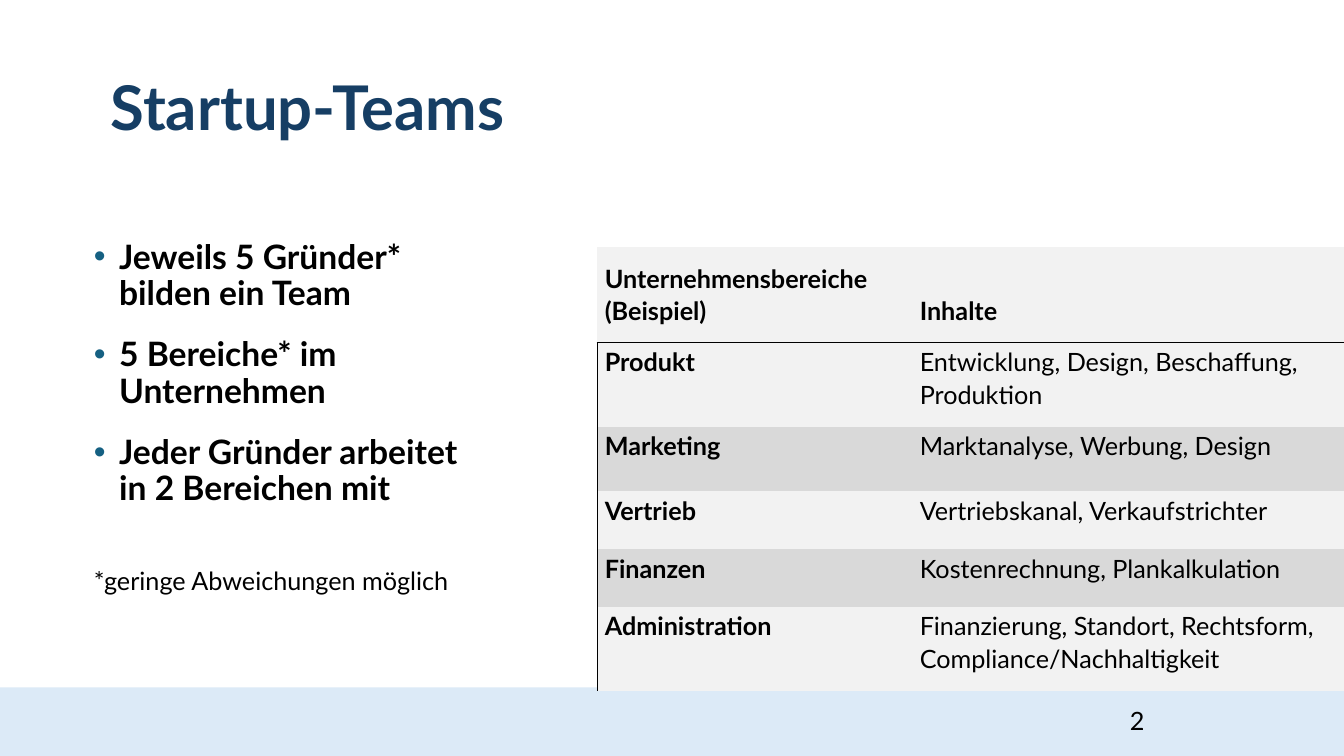
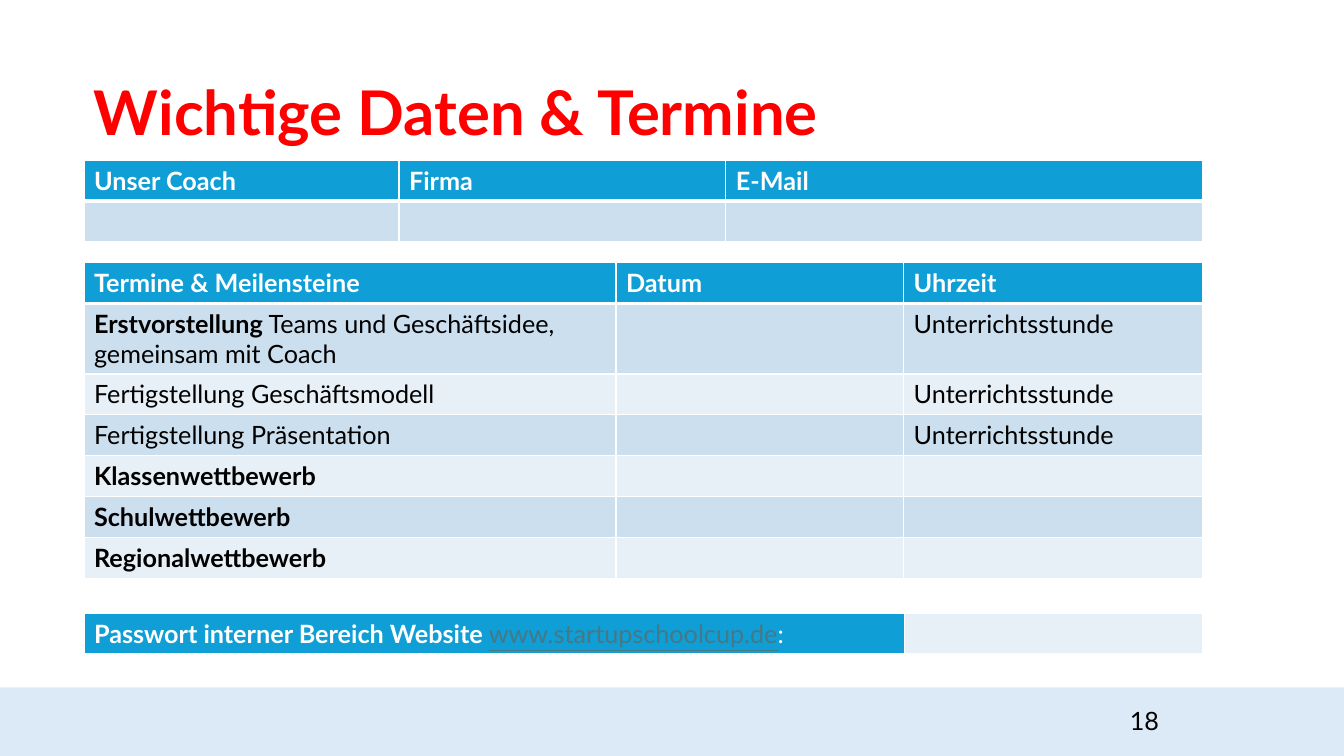
from lxml.etree import SubElement
from pptx import Presentation
from pptx.dml.color import RGBColor
from pptx.enum.shapes import MSO_SHAPE
from pptx.enum.text import MSO_ANCHOR
from pptx.oxml.ns import qn
from pptx.util import Pt

FONT = "Lato"
BLACK = RGBColor(0x00, 0x00, 0x00)
WHITE = RGBColor(0xFF, 0xFF, 0xFF)
NAVY = RGBColor(0x16, 0x3E, 0x64)
RED = RGBColor(0xFF, 0x00, 0x00)
TEAL = RGBColor(0x15, 0x60, 0x82)
BAND_BLUE = RGBColor(0xDC, 0xEA, 0xF7)
LIGHT_GREY = RGBColor(0xF2, 0xF2, 0xF2)
MID_GREY = RGBColor(0xD9, 0xD9, 0xD9)
HEADER_BLUE = RGBColor(0x0F, 0x9E, 0xD5)
ROW_BLUE = RGBColor(0xCC, 0xDF, 0xEF)
PALE_BLUE = RGBColor(0xE7, 0xF0, 0xF7)
LINK_BLUE = RGBColor(0x46, 0x78, 0x86)


def format_text(para, size, color, bold):
    for span in para.runs:
        span.font.name = FONT
        span.font.size = Pt(size)
        span.font.color.rgb = color
        span.font.bold = bold


def fill_cell(cell, pieces, fill, color, edges):
    """Write a bold piece followed by regular ones; edges maps a side to (color, width)."""
    para = cell.text_frame.paragraphs[0]
    for text in pieces:
        if text:
            para.add_run().text = text
    format_text(para, 18, color, False)
    if pieces and pieces[0]:
        para.runs[0].font.bold = True
    properties = cell._tc.get_or_add_tcPr()
    for side in "LRTB":
        line = SubElement(properties, qn(f"a:ln{side}"))
        if side in edges:
            line_color, width = edges[side]
            line.set("w", str(Pt(width)))
            solid = SubElement(line, qn("a:solidFill"))
            SubElement(solid, qn("a:srgbClr")).set("val", str(line_color))
        else:
            line.set("w", "0")
            SubElement(line, qn("a:noFill"))
    cell.fill.solid()
    cell.fill.fore_color.rgb = fill


deck = Presentation()
deck.slide_width, deck.slide_height = Pt(960), Pt(540)

# Shared frame: footer band, page number, title
frames = [
    ("2", "Startup-Teams", 72, 41, NAVY),
    ("18", "Wichtige Daten & Termine", 60, 44, RED),
]
for number, title, left, top, title_color in frames:
    page = deck.slides.add_slide(deck.slide_layouts[6])
    band = page.shapes.add_shape(MSO_SHAPE.RECTANGLE, Pt(0), Pt(491), Pt(960), Pt(49))
    band.shadow.inherit = False
    band.fill.solid()
    band.fill.fore_color.rgb = BAND_BLUE
    band.line.fill.background()

    number_box = page.shapes.add_textbox(Pt(800), Pt(500.5), Pt(94), Pt(29))
    number_box.text_frame.text = number
    format_text(number_box.text_frame.paragraphs[0], 18, BLACK, False)

    title_box = page.shapes.add_textbox(Pt(left), Pt(top), Pt(828), Pt(65.5))
    title_box.text_frame.word_wrap = True
    title_box.text_frame.vertical_anchor = MSO_ANCHOR.BOTTOM
    title_box.text_frame.text = title
    title_para = title_box.text_frame.paragraphs[0]
    title_para.line_spacing = 0.9
    format_text(title_para, 44, title_color, True)

team_page, date_page = deck.slides

# Team rules
rules = [
    "Jeweils 5 Gründer* bilden ein Team",
    "5 Bereiche* im Unternehmen",
    "Jeder Gründer arbeitet in 2 Bereichen mit",
]
footnote = "*geringe Abweichungen möglich"
rule_box = team_page.shapes.add_textbox(Pt(60), Pt(168), Pt(294.5), Pt(268.5))
rule_frame = rule_box.text_frame
rule_frame.word_wrap = True
rule_frame.text = "\n".join(rules + [footnote])
*rule_paras, note_para = rule_frame.paragraphs
for index, para in enumerate(rule_paras):
    properties = para._p.get_or_add_pPr()
    properties.set("marL", str(Pt(18)))
    properties.set("indent", str(Pt(-18)))
    bullet_color = SubElement(properties, qn("a:buClr"))
    SubElement(bullet_color, qn("a:srgbClr")).set("val", str(TEAL))
    SubElement(properties, qn("a:buFont")).set("typeface", "Arial")
    SubElement(properties, qn("a:buChar")).set("char", "•")
    para.line_spacing = 0.9
    if index:
        para.space_before = Pt(18)
    format_text(para, 24, BLACK, True)
note_para.line_spacing = 0.9
note_para.space_before = Pt(43.5)
format_text(note_para, 18, BLACK, False)

# Business areas
areas = [
    (68.4, "Unternehmensbereiche (Beispiel)", "Inhalte"),
    (60, "Produkt", "Entwicklung, Design, Beschaffung, Produktion"),
    (46, "Marketing", "Marktanalyse, Werbung, Design"),
    (41.5, "Vertrieb", "Vertriebskanal, Verkaufstrichter"),
    (41, "Finanzen", "Kostenrechnung, Plankalkulation"),
    (60.5, "Administration", "Finanzierung, Standort, Rechtsform, Compliance/Nachhaltigkeit"),
]
area_table = team_page.shapes.add_table(
    len(areas), 2, Pt(426.5), Pt(176.5), Pt(534), Pt(317.4)).table
area_table.first_row = area_table.horz_banding = False
area_table.columns[0].width, area_table.columns[1].width = Pt(225), Pt(309)
for row, (height, area, content) in enumerate(areas):
    area_table.rows[row].height = Pt(height)
    fill = MID_GREY if row in (2, 4) else LIGHT_GREY
    for column, text in enumerate((area, content)):
        edges = {}
        if row == 0:
            edges["B"] = (BLACK, 1)
        if row == 1:
            edges["T"] = (BLACK, 1)
        if row and column == 0:
            edges["L"] = (BLACK, 1)
        cell = area_table.cell(row, column)
        pieces = (text,) if row == 0 or column == 0 else ("", text)
        fill_cell(cell, pieces, fill, BLACK, edges)
        cell.margin_left, cell.margin_right = Pt(5.5), Pt(6.5)
        cell.margin_top, cell.margin_bottom = Pt(1.5), Pt(12)
        cell.vertical_anchor = MSO_ANCHOR.BOTTOM if row == 0 else MSO_ANCHOR.TOP
        cell.text_frame.paragraphs[0].line_spacing = 1.07

# Dates, coach and password: (top, column widths, rows of cells)
lesson = ("", "Unterrichtsstunde")
blank = ()
grids = [
    (187.5, (380, 205.5, 213.5), [
        [("Termine & Meilensteine",), ("Datum",), ("Uhrzeit",)],
        [("Erstvorstellung", " Teams und Geschäftsidee, gemeinsam mit Coach"), blank, lesson],
        [("", "Fertigstellung Geschäftsmodell"), blank, lesson],
        [("", "Fertigstellung Präsentation"), blank, lesson],
        [("Klassenwettbewerb",), blank, blank],
        [("Schulwettbewerb",), blank, blank],
        [("Regionalwettbewerb",), blank, blank],
    ]),
    (114.5, (225, 233.5, 340.5), [
        [("Unser Coach",), ("Firma",), ("E-Mail",)],
        [blank, blank, blank],
    ]),
    (438.5, (586, 213), [
        [("Passwort interner Bereich Website ", "www.startupschoolcup.de", ":"), blank],
    ]),
]
ROW_HEIGHT = 29.2
for top, widths, lines in grids:
    table = date_page.shapes.add_table(
        len(lines), len(widths), Pt(60), Pt(top),
        Pt(sum(widths)), Pt(ROW_HEIGHT * len(lines))).table
    table.first_row = table.horz_banding = False
    for column, width in enumerate(widths):
        table.columns[column].width = Pt(width)
    for row, line in enumerate(lines):
        table.rows[row].height = Pt(ROW_HEIGHT)
        edges = {side: (WHITE, 1) for side in "LRTB"}
        if row == 0:
            fill, color = HEADER_BLUE, WHITE
            edges["B"] = (WHITE, 3)
        else:
            fill, color = (ROW_BLUE if row % 2 else PALE_BLUE), BLACK
            if row == 1:
                edges["T"] = (WHITE, 3)
        for column, pieces in enumerate(line):
            fill_cell(table.cell(row, column), pieces, fill, color, edges)

# The last table holds the password: mark the address, keep the entry field pale
address = table.cell(0, 0).text_frame.paragraphs[0].runs[1]
address.font.color.rgb = LINK_BLUE
address.font.underline = True
table.cell(0, 1).fill.fore_color.rgb = PALE_BLUE

deck.save("out.pptx")
